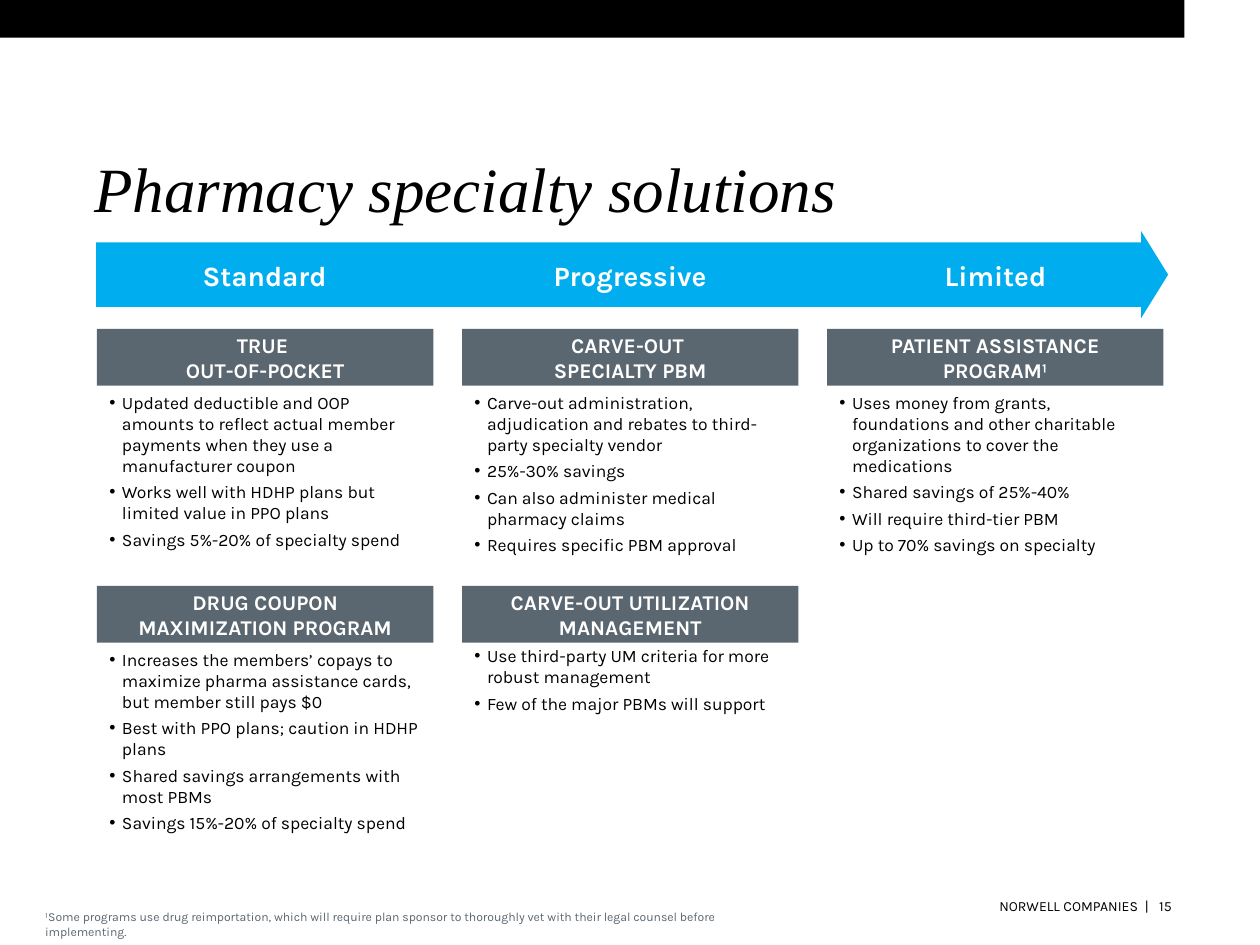
"""Build the pharmacy specialty solutions slide."""
from lxml import etree
from pptx import Presentation
from pptx.dml.color import RGBColor
from pptx.enum.shapes import MSO_SHAPE
from pptx.enum.text import MSO_ANCHOR, PP_ALIGN
from pptx.oxml.ns import qn
from pptx.util import Pt

RECT, ARROW = MSO_SHAPE.RECTANGLE, MSO_SHAPE.RIGHT_ARROW
TOP, MIDDLE, BOTTOM = MSO_ANCHOR.TOP, MSO_ANCHOR.MIDDLE, MSO_ANCHOR.BOTTOM
LEFT, CENTER, RIGHT = PP_ALIGN.LEFT, PP_ALIGN.CENTER, PP_ALIGN.RIGHT

COLORS = {"black": "000000", "white": "FFFFFF", "slate": "5B6770", "blue": "00AEEF"}
FONT = "Karla"
COL_X, COL_STEP = 55.44, 208.6
ROW_Y, ROW_STEP = 188, 146.8
CARD_W, HEAD_H, CARD_H = 192.24, 32.4, 151.2

CARDS = [
    (0, 0, "TRUE \nOUT-OF-POCKET", [
        "Updated deductible and OOP amounts to reflect actual member payments when they use a manufacturer coupon",
        "Works well with HDHP plans but limited value in PPO plans",
        "Savings 5%-20% of specialty spend"]),
    (1, 0, "CARVE-OUT \nSPECIALTY PBM", [
        "Carve-out administration, adjudication and rebates to third-party specialty vendor",
        "25%-30% savings",
        "Can also administer medical \npharmacy claims",
        "Requires specific PBM approval"]),
    (2, 0, "PATIENT ASSISTANCE PROGRAM¹", [
        "Uses money from grants, foundations and other charitable organizations to cover the medications",
        "Shared savings of 25%-40%",
        "Will require third-tier PBM",
        "Up to 70% savings on specialty"]),
    (0, 1, "DRUG COUPON MAXIMIZATION PROGRAM", [
        "Increases the members’ copays to maximize pharma assistance cards, but member still pays $0",
        "Best with PPO plans; caution in HDHP plans",
        "Shared savings arrangements with \nmost PBMs",
        "Savings 15%-20% of specialty spend"]),
    (1, 1, "CARVE-OUT UTILIZATION MANAGEMENT", [
        "Use third-party UM criteria for more robust management",
        "Few of the major PBMs will support"]),
]


def add_block(x, y, w, h, fill=None, shape=RECT):
    if fill is None:
        return s.shapes.add_textbox(Pt(x), Pt(y), Pt(w), Pt(h))
    sp = s.shapes.add_shape(shape, Pt(x), Pt(y), Pt(w), Pt(h))
    sp.shadow.inherit = False
    sp.fill.solid()
    sp.fill.fore_color.rgb = RGBColor.from_string(COLORS[fill])
    sp.line.fill.background()
    return sp


def write(sp, texts, size, color, align=LEFT, anchor=TOP, insets=(7.2, 3.6, 7.2, 3.6),
          bold=False, italic=False, font=FONT, before=0, after=0, bullet=False):
    tf = sp.text_frame
    tf.word_wrap = True
    tf.vertical_anchor = anchor
    tf.margin_left, tf.margin_top, tf.margin_right, tf.margin_bottom = map(Pt, insets)
    for i, text in enumerate(texts):
        p = tf.add_paragraph() if i else tf.paragraphs[0]
        p.alignment = align
        p.space_before, p.space_after = Pt(before), Pt(after)
        if bullet:
            pPr = p._p.get_or_add_pPr()
            pPr.set("marL", str(Pt(7.2)))
            pPr.set("indent", str(Pt(-7.2)))
            etree.SubElement(pPr, qn("a:buFont")).set("typeface", "Arial")
            etree.SubElement(pPr, qn("a:buChar")).set("char", "•")
        for j, line in enumerate(text.split("\n")):
            if j:
                p.add_line_break()
            r = p.add_run()
            r.text = line
            r.font.name, r.font.size = font, Pt(size)
            r.font.bold, r.font.italic = bold, italic
            r.font.color.rgb = RGBColor.from_string(COLORS[color])


prs = Presentation()
prs.slide_width, prs.slide_height = Pt(720), Pt(540)
s = prs.slides.add_slide(prs.slide_layouts[5])

add_block(0, 0, 676.8, 21.6, "black")

title = s.shapes.title
title.left, title.top, title.width, title.height = Pt(54), Pt(43.2), Pt(612), Pt(85.68)
write(title, ["Pharmacy specialty solutions"], 36, "black", anchor=BOTTOM,
      insets=(0, 0, 0, 0), italic=True, font="Times New Roman")

for col, row, heading, points in CARDS:
    x, y = COL_X + col * COL_STEP, ROW_Y + row * ROW_STEP
    head = add_block(x, y, CARD_W, HEAD_H, "slate")
    write(head, [heading], 12, "white", CENTER, MIDDLE, (10.8, 5.04, 10.8, 5.04),
          bold=True, before=3.8, after=2.2)
    body = add_block(x, y, CARD_W, CARD_H)
    write(body, points, 10, "black", insets=(7.2, 36, 7.2, 7.2), before=3, bullet=True)

arrow = add_block(54.9, 132, 612.6, 49.9, "blue", ARROW)
arrow.adjustments[0], arrow.adjustments[1] = 0.74, 0.31

for i, stage in enumerate(["Standard", "Progressive", "Limited"]):
    label = add_block(74.88 + i * 208.8, 144, 152.64, 26.64)
    write(label, [stage], 16, "white", CENTER, bold=True)

footnote = add_block(18.72, 516.24, 436.32, 15.84)
write(footnote, ["¹Some programs use drug reimportation, which will require plan sponsor to "
                 "thoroughly vet with their legal counsel before implementing."], 7, "slate")

for x, w, text in [(524.16, 132.48, "NORWELL COMPANIES  |"), (653.76, 15.84, "15")]:
    footer = add_block(x, 509.04, w, 17.28)
    write(footer, [text], 8, "black", RIGHT, MIDDLE, (0, 3.6, 0, 3.6))

prs.save("out.pptx")
